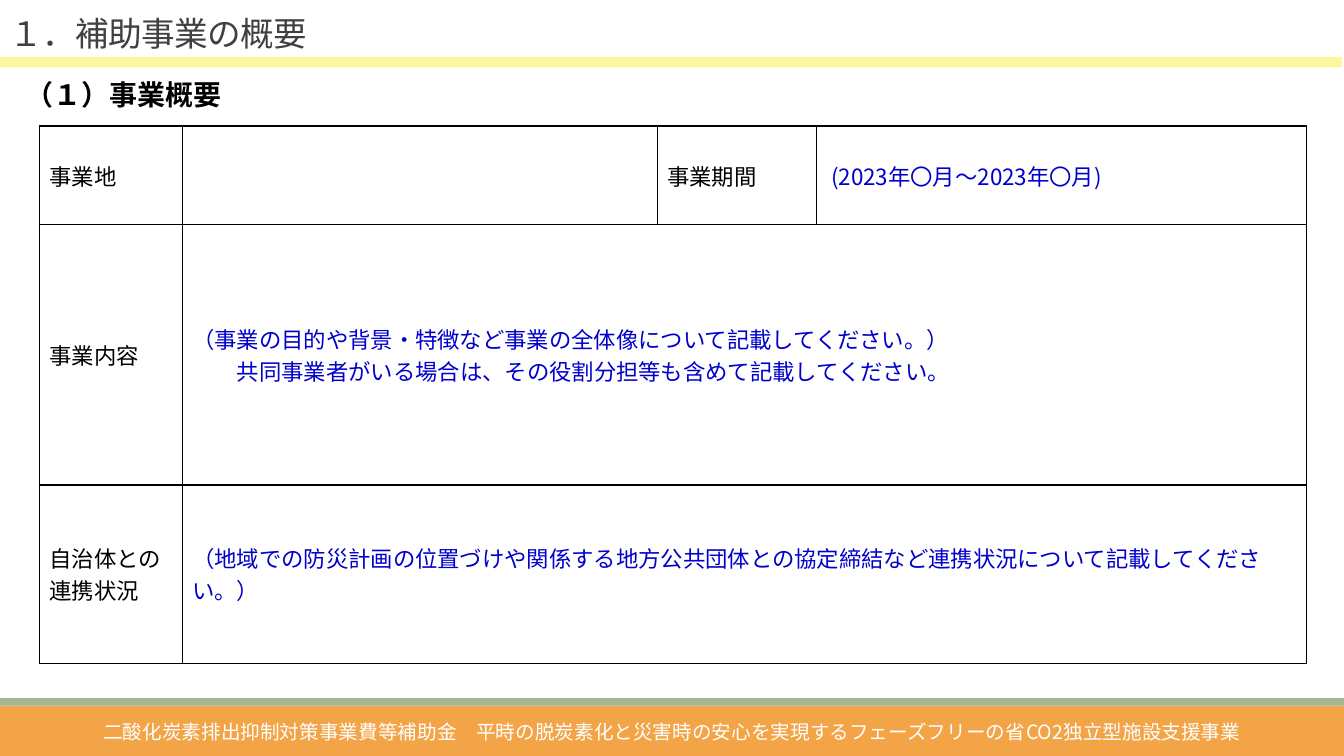
from lxml.etree import SubElement
from pptx import Presentation
from pptx.dml.color import RGBColor
from pptx.enum.shapes import MSO_SHAPE
from pptx.enum.text import MSO_ANCHOR as ANCHOR, PP_ALIGN as ALIGN
from pptx.oxml.ns import qn
from pptx.util import Pt

FONT = "Noto Sans CJK JP"
COLORS = {
    "footer": "F3A447", "footer_edge": "A5B592", "title_rule": "FDF69C",
    "title": "404040", "label": "000000", "hint": "0000CC",
    "border": "000000", "white": "FFFFFF",
}

# colour name, (left, top, width, height)
BARS = [
    ("footer", (0, 504, 960, 36)),
    ("footer_edge", (0, 498.7, 960, 5.3)),
    ("title_rule", (0, 40.8, 958.5, 7.2)),
]

# text, box, colour name, font format, paragraph format, anchor
TEXTS = [
    ("１．補助事業の概要", (0, 2.2, 247.7, 39.6), "title",
     {"size": Pt(24)}, {"line_spacing": 0.85}, ANCHOR.BOTTOM),
    ("（１）事業概要", (10.8, 51.8, 388.8, 31.7), "label",
     {"size": Pt(20), "bold": True}, {}, ANCHOR.TOP),
    ("二酸化炭素排出抑制対策事業費等補助金　平時の脱炭素化と災害時の安心を実現する"
     "フェーズフリーの省CO2独立型施設支援事業", (15.1, 510.5, 929.5, 26.6), "white",
     {"size": Pt(14)}, {"alignment": ALIGN.CENTER}, ANCHOR.TOP),
]

TABLE_AT = (28.1, 90)
COLS = [102, 339.3, 113.6, 350.4]
ROWS = [70.6, 185.8, 127.4]
# each row: cells as lists of (text, left indent); a short row spans to the right edge
CELLS = [
    [[("事業地", 0)], [], [("事業期間", 0)], [(" (2023年〇月～2023年〇月)", 0)]],
    [[("事業内容", 0)],
     [("（事業の目的や背景・特徴など事業の全体像について記載してください。）", 0),
      ("共同事業者がいる場合は、その役割分担等も含めて記載してください。", 32)]],
    [[("自治体との連携状況", 0)],
     [("（地域での防災計画の位置づけや関係する地方公共団体との協定締結など"
       "連携状況について記載してください。）", 0)]],
]


def rgb(name):
    return RGBColor.from_string(COLORS[name])


def apply(obj, fmt):
    for key, value in fmt.items():
        setattr(obj, key, value)


def add_run(p, text, color, fmt):
    """Add a run with the font set for both Latin and East Asian text."""
    r = p.add_run()
    r.text = text
    apply(r.font, {"name": FONT, **fmt})
    r.font.color.rgb = rgb(color)
    SubElement(r.font._element, qn("a:ea"), typeface=FONT)
    return r


def add_bar(slide, color, box):
    sp = slide.shapes.add_shape(MSO_SHAPE.RECTANGLE, *map(Pt, box))
    sp.shadow.inherit = False
    sp.fill.solid()
    sp.fill.fore_color.rgb = rgb(color)
    sp.line.fill.background()


def add_text(slide, text, box, color, font, para, anchor):
    tf = slide.shapes.add_textbox(*map(Pt, box)).text_frame
    apply(tf, {"word_wrap": True, "vertical_anchor": anchor})
    p = tf.paragraphs[0]
    apply(p, para)
    return add_run(p, text, color, font)


def add_borders(cell):
    pr = cell._tc.get_or_add_tcPr()
    for i, side in enumerate(("lnL", "lnR", "lnT", "lnB")):
        ln = pr.makeelement(qn(f"a:{side}"), {"w": str(Pt(1))})
        fill = SubElement(ln, qn("a:solidFill"))
        SubElement(fill, qn("a:srgbClr"), val=COLORS["border"])
        pr.insert(i, ln)


def fill_cell(cell, lines, color):
    cell.vertical_anchor = ANCHOR.MIDDLE
    tf = cell.text_frame
    for i, (text, indent) in enumerate(lines):
        p = tf.add_paragraph() if i else tf.paragraphs[0]
        if indent:
            p._p.get_or_add_pPr().set("marL", str(Pt(indent)))
        add_run(p, text, color, {"size": Pt(16)})


def add_overview_table(slide):
    size = (sum(COLS), sum(ROWS))
    table = slide.shapes.add_table(
        len(ROWS), len(COLS), *map(Pt, TABLE_AT + size)).table
    apply(table, {"first_row": False, "horz_banding": False})
    for col, width in zip(table.columns, COLS):
        col.width = Pt(width)
    for row, height in zip(table.rows, ROWS):
        row.height = Pt(height)
    for cell in table.iter_cells():
        cell.fill.background()
        add_borders(cell)
    for r, cells in enumerate(CELLS):
        if len(cells) < len(COLS):
            table.cell(r, len(cells) - 1).merge(table.cell(r, len(COLS) - 1))
        for c, lines in enumerate(cells):
            fill_cell(table.cell(r, c), lines, "hint" if c % 2 else "label")


def main():
    prs = Presentation()
    apply(prs, {"slide_width": Pt(960), "slide_height": Pt(540)})
    slide = prs.slides.add_slide(prs.slide_layouts[6])
    for bar in BARS:
        add_bar(slide, *bar)
    title, *_ = [add_text(slide, *text) for text in TEXTS]
    title.font._element.set("spc", "-50")
    add_overview_table(slide)
    prs.save("out.pptx")


if __name__ == "__main__":
    main()
